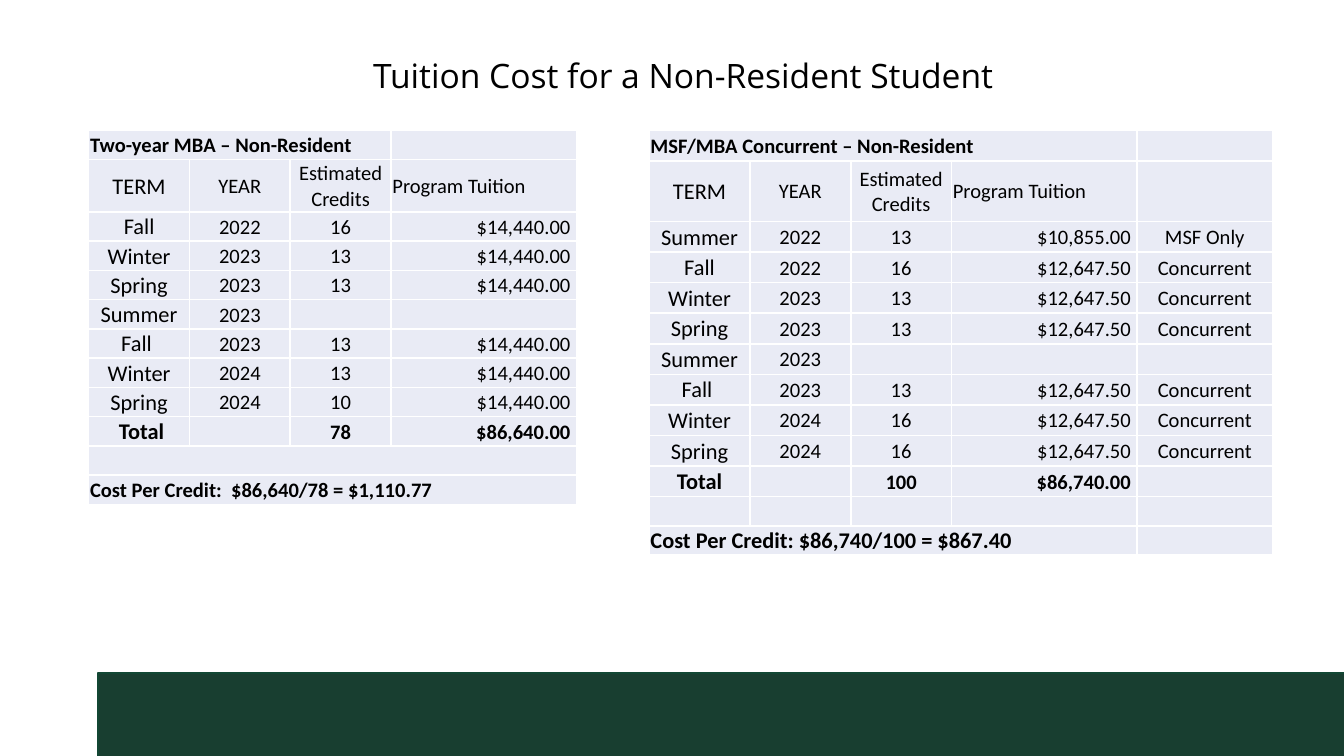
"""Build the non-resident tuition cost slide with its two programme tables."""
import pptx
import pptx.util
import pptx.dml.color
import pptx.enum.shapes
import pptx.enum.text
import pptx.oxml.ns
from lxml import etree

Inches, Pt = pptx.util.Inches, pptx.util.Pt
RGBColor = pptx.dml.color.RGBColor
ALIGN = pptx.enum.text.PP_ALIGN
GREEN = RGBColor(0x18, 0x3E, 0x30)
GREEN_LINE = RGBColor(0x12, 0x47, 0x34)
CELL = RGBColor(0xE9, 0xEB, 0xF5)
BLACK = RGBColor(0, 0, 0)
WHITE = RGBColor(0xFF, 0xFF, 0xFF)

TITLE = "Tuition Cost for a Non-Resident Student"
FOOT_ROW = 15.7
TABLES = [
    {
        "left": 0.66, "header_row": 28, "term_row": 15.7, "cost_size": 11,
        "cols": [0.75, 0.75, 0.75, 1.38],
        "merged_rows": [0, 10, 11], "title_span": 3,
        "rows": [
            ["Two-year MBA – Non-Resident"],
            ["TERM", "YEAR", "Estimated Credits", "Program Tuition"],
            ["Fall", "2022", "16", "$14,440.00 "],
            ["Winter", "2023", "13", "$14,440.00 "],
            ["Spring", "2023", "13", "$14,440.00 "],
            ["Summer", "2023"],
            ["Fall ", "2023", "13", "$14,440.00 "],
            ["Winter", "2024", "13", "$14,440.00 "],
            ["Spring", "2024", "10", "$14,440.00 "],
            [" Total", "", "78", "$86,640.00 "],
            [],
            ["Cost Per Credit:  $86,640/78 = $1,110.77"],
        ],
    },
    {
        "left": 4.83, "header_row": 32.4, "term_row": 16.4, "cost_size": 12,
        "cols": [0.75, 0.75, 0.75, 1.38, 1.01],
        "merged_rows": [0, 12], "title_span": 4,
        "rows": [
            ["MSF/MBA Concurrent – Non-Resident"],
            ["TERM", "YEAR", "Estimated\nCredits", "Program Tuition"],
            ["Summer", "2022", "13", "$10,855.00 ", "MSF Only"],
            ["Fall", "2022", "16", "$12,647.50 ", "Concurrent"],
            ["Winter", "2023", "13", "$12,647.50 ", "Concurrent"],
            ["Spring", "2023", "13", "$12,647.50 ", "Concurrent"],
            ["Summer", "2023"],
            ["Fall ", "2023", "13", "$12,647.50 ", "Concurrent"],
            ["Winter", "2024", "16", "$12,647.50 ", "Concurrent"],
            ["Spring", "2024", "16", "$12,647.50 ", "Concurrent"],
            [" Total ", "", "100", "$86,740.00 "],
            [],
            ["Cost Per Credit: $86,740/100 = $867.40"],
        ],
    },
]


def style_run(r, size, name, bold=False):
    r.font.size, r.font.name, r.font.bold = Pt(size), name, bold
    r.font.color.rgb = BLACK


def style_cell(cell):
    cell.margin_left = cell.margin_right = cell.margin_top = Inches(0.01)
    cell.margin_bottom = 0
    cell.vertical_anchor = pptx.enum.text.MSO_ANCHOR.MIDDLE
    qn = pptx.oxml.ns.qn
    tc_pr = cell._tc.get_or_add_tcPr()
    for side in ("lnL", "lnR", "lnT", "lnB"):
        ln = etree.SubElement(tc_pr, qn("a:" + side), w=str(Pt(1)))
        fill = etree.SubElement(ln, qn("a:solidFill"))
        etree.SubElement(fill, qn("a:srgbClr"), val=str(WHITE))
    cell.fill.solid()
    cell.fill.fore_color.rgb = CELL


def fill_cell(cell, text, size, align, bold):
    cell.text_frame.text = text
    for p in cell.text_frame.paragraphs:
        p.alignment = align
        for r in p.runs:
            style_run(r, size, "Calibri", bold)
        if not text:
            etree.SubElement(p._p, pptx.oxml.ns.qn("a:endParaRPr"), sz="1100")


def add_cost_table(s, data):
    rows, cols = data["rows"], data["cols"]
    last = len(rows) - 1
    heights = [data["term_row"]] * (last - 1) + [FOOT_ROW] * 2
    heights[1] = data["header_row"]
    table = s.shapes.add_table(
        len(rows), len(cols), Inches(data["left"]), Inches(0.97),
        Inches(sum(cols)), Pt(sum(heights))).table
    table.first_row = table.horz_banding = False
    for col, width in zip(table.columns, cols):
        col.width = Inches(width)
    for i, values in enumerate(rows):
        table.rows[i].height = Pt(heights[i])
        bold = i in (0, last) or "Total" in "".join(values[:1])
        for j in range(len(cols)):
            text = values[j] if j < len(values) else ""
            size, align = (12 if j == 0 else 11), ALIGN.CENTER
            if i in (0, last):
                size, align = (11 if i == 0 else data["cost_size"]), ALIGN.LEFT
            elif j == 3:
                align = ALIGN.LEFT if i == 1 else ALIGN.RIGHT
            cell = table.cell(i, j)
            style_cell(cell)
            fill_cell(cell, text, size, align, bold)
    for i in data["merged_rows"]:
        span = data["title_span"] if i == 0 else 4
        table.cell(i, 0).merge(table.cell(i, span - 1))


def main():
    prs = pptx.Presentation()
    prs.slide_width = Inches(10)
    prs.slide_height = prs.slide_width * 9 // 16
    s = prs.slides.add_slide(prs.slide_layouts[6])

    band = s.shapes.add_shape(
        pptx.enum.shapes.MSO_SHAPE.RECTANGLE,
        Inches(0.73), Inches(5.01), Inches(9.28), Inches(0.64))
    band.shadow.inherit = False
    band.fill.solid()
    band.fill.fore_color.rgb = GREEN
    band.line.color.rgb = GREEN_LINE
    band.line.width = Pt(1)

    title = s.shapes.add_textbox(
        Inches(0.53), Inches(0.39), Inches(9.11), Inches(3.92))
    tf = title.text_frame
    tf.word_wrap = True
    tf.text = TITLE
    p = tf.paragraphs[0]
    p.alignment, p.line_spacing = ALIGN.CENTER, 0.9
    style_run(p.runs[0], 18, "Open Sans")

    for data in TABLES:
        add_cost_table(s, data)
    prs.save("out.pptx")


if __name__ == "__main__":
    main()
